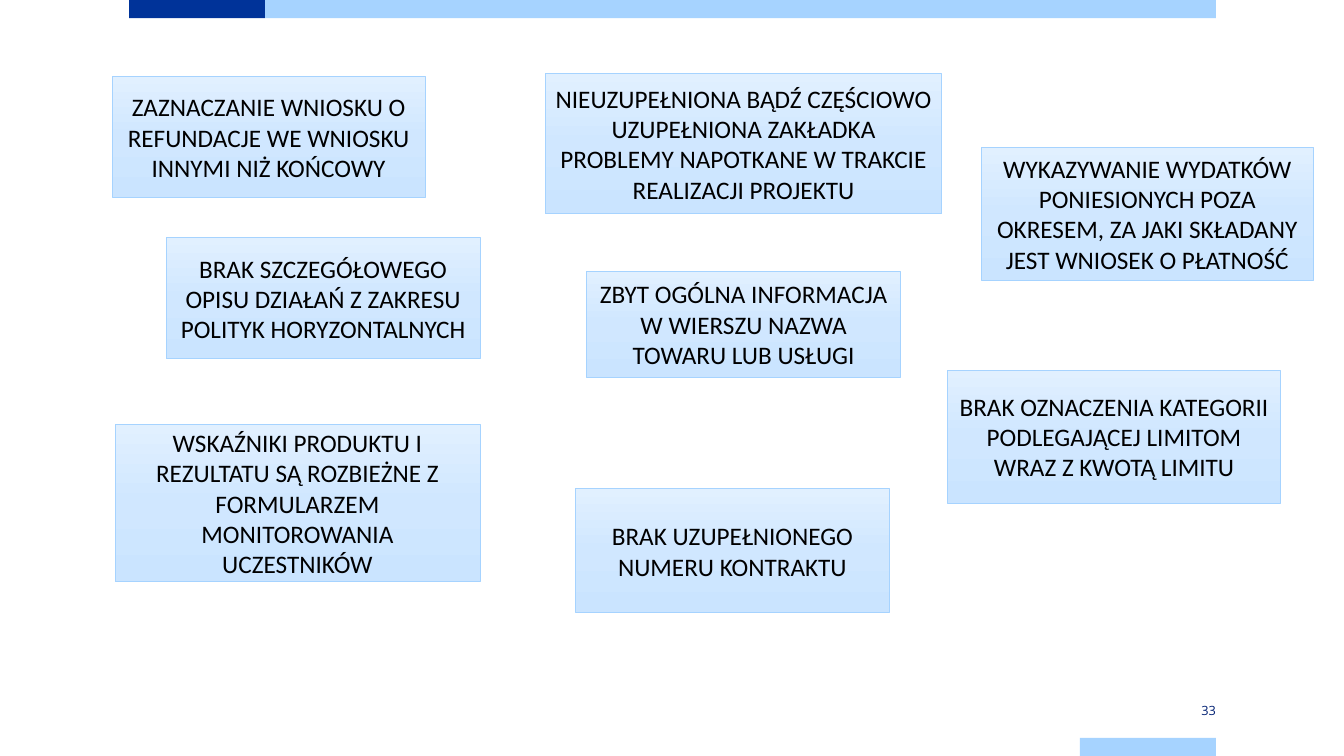
from copy import deepcopy

from pptx import Presentation
from pptx.dml.color import RGBColor
from pptx.enum import shapes, text
from pptx.util import Inches, Pt

# left, top, width, height in inches
BANDS = [
    ("003399", (1.28, 0, 1.35, 0.18)),
    ("A6D3FF", (2.63, 0, 9.43, 0.18)),
    ("A6D3FF", (10.71, 7.32, 1.35, 0.18)),
]
PAGE_NUMBER = ("33", (10.71, 6.96, 1.35, 0.18))
ERRORS = [
    ("ZAZNACZANIE WNIOSKU O REFUNDACJE WE WNIOSKU INNYMI NIŻ KOŃCOWY",
     (1.11, 0.76, 3.11, 1.2)),
    ("BRAK SZCZEGÓŁOWEGO OPISU DZIAŁAŃ Z ZAKRESU POLITYK HORYZONTALNYCH",
     (1.65, 2.36, 3.11, 1.2)),
    ("WSKAŹNIKI PRODUKTU I REZULTATU SĄ ROZBIEŻNE Z FORMULARZEM "
     "MONITOROWANIA UCZESTNIKÓW",
     (1.14, 4.21, 3.62, 1.56)),
    ("NIEUZUPEŁNIONA BĄDŹ CZĘŚCIOWO UZUPEŁNIONA ZAKŁADKA PROBLEMY "
     "NAPOTKANE W TRAKCIE REALIZACJI PROJEKTU",
     (5.41, 0.73, 3.93, 1.39)),
    ("WYKAZYWANIE WYDATKÓW PONIESIONYCH POZA OKRESEM, ZA JAKI SKŁADANY "
     "JEST WNIOSEK O PŁATNOŚĆ",
     (9.73, 1.46, 3.3, 1.32)),
    ("ZBYT OGÓLNA INFORMACJA W WIERSZU NAZWA TOWARU LUB USŁUGI",
     (5.82, 2.69, 3.11, 1.05)),
    ("BRAK OZNACZENIA KATEGORII PODLEGAJĄCEJ LIMITOM WRAZ Z KWOTĄ LIMITU",
     (9.4, 3.67, 3.3, 1.32)),
    ("BRAK UZUPEŁNIONEGO NUMERU KONTRAKTU",
     (5.71, 4.85, 3.11, 1.23)),
]
GRADIENT = [(0, "E1F0FF"), (0.5, "D0E7FF"), (1, "CAE4FF")]


def color(hex_code):
    return RGBColor.from_string(hex_code)


def add_rectangle(slide, place):
    rectangle = slide.shapes.add_shape(
        shapes.MSO_SHAPE.RECTANGLE, *map(Inches, place))
    rectangle.shadow.inherit = False
    return rectangle


def fill_gradient(fill):
    """Apply GRADIENT from top to bottom."""
    fill.gradient()
    fill.gradient_angle = 270
    stop_list = fill._fill._gradFill.gsLst
    stop_list.append(deepcopy(stop_list[0]))
    for stop, (position, hex_code) in zip(fill.gradient_stops, GRADIENT):
        stop.position = position
        stop.color.rgb = color(hex_code)


def write(frame, wording, font_name, size, hex_code, alignment):
    frame.text = wording
    frame.word_wrap = True
    frame.vertical_anchor = text.MSO_ANCHOR.MIDDLE
    paragraph = frame.paragraphs[0]
    paragraph.alignment = alignment
    font = paragraph.runs[0].font
    font.name = font_name
    font.size = Pt(size)
    font.color.rgb = color(hex_code)


def main():
    deck = Presentation()
    deck.slide_width, deck.slide_height = Inches(13.33), Inches(7.5)
    slide = deck.slides.add_slide(deck.slide_layouts[6])

    for hex_code, place in BANDS:
        band = add_rectangle(slide, place)
        band.fill.solid()
        band.fill.fore_color.rgb = color(hex_code)
        band.line.fill.background()

    number, place = PAGE_NUMBER
    frame = slide.shapes.add_textbox(*map(Inches, place)).text_frame
    frame.margin_left = frame.margin_right = 0
    frame.margin_top = frame.margin_bottom = Inches(0.08)
    write(frame, number, "Open Sans", 9.1, "002073", text.PP_ALIGN.RIGHT)

    for error, place in ERRORS:
        card = add_rectangle(slide, place)
        fill_gradient(card.fill)
        card.line.color.rgb = color("A6D3FF")
        card.line.width = Pt(0.5)
        write(card.text_frame, error, "Calibri", 18, "000000",
              text.PP_ALIGN.CENTER)

    deck.save("out.pptx")


if __name__ == "__main__":
    main()
